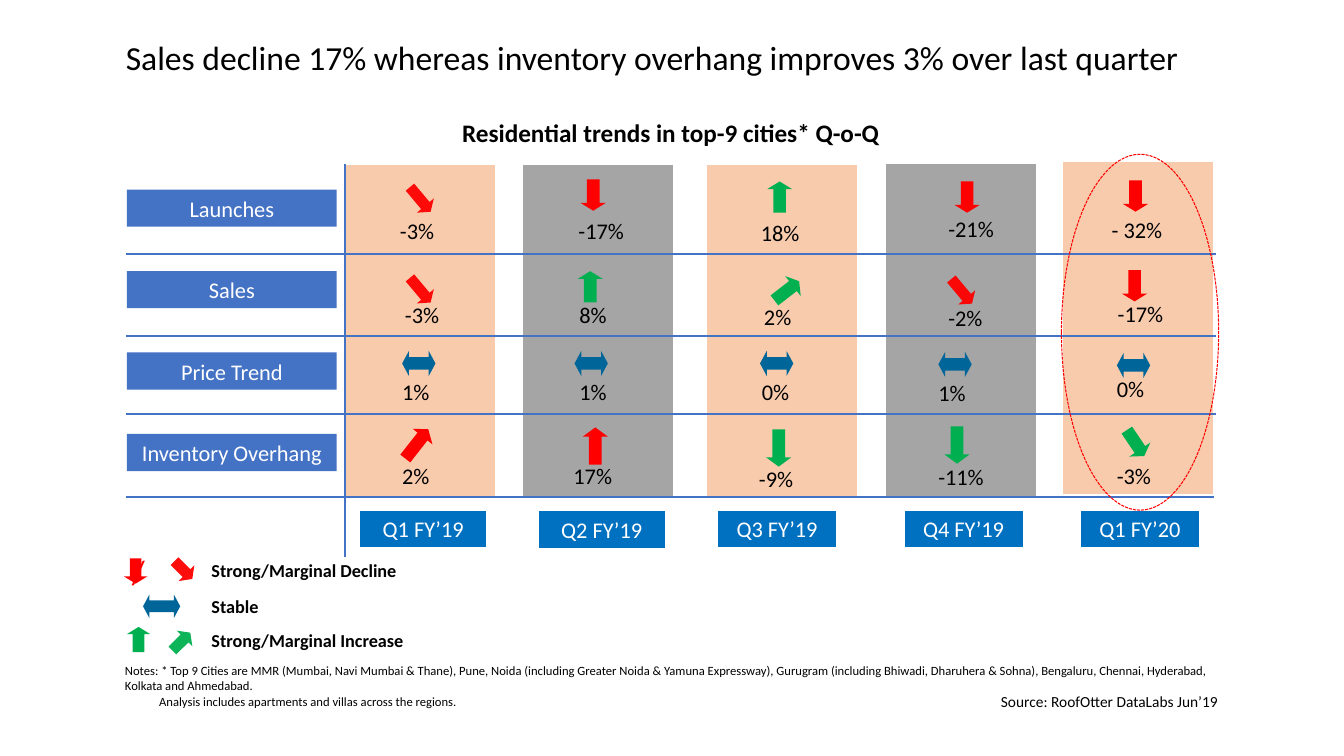
"""Builds the quarterly residential trends slide and saves it as out.pptx."""
from lxml import etree
from pptx import Presentation
from pptx import util as u
from pptx.dml import color as col
from pptx.enum import dml, shapes, text
from pptx.oxml import ns

BLACK, WHITE, RED, GREEN = "000000", "FFFFFF", "FF0000", "00B050"
BLUE, TAG_BLUE, TEAL = "4472C4", "0070C0", "006699"
PEACH, GREY = "F8CBAD", "A5A5A5"
SHAPE = shapes.MSO_SHAPE
LEFT, CENTER = text.PP_ALIGN.LEFT, text.PP_ALIGN.CENTER
TOP, MIDDLE = text.MSO_ANCHOR.TOP, text.MSO_ANCHOR.MIDDLE

ARROWS = {
    "fall": (SHAPE.UP_ARROW, 18, 22.3, 0.31, 180, RED, 100),
    "sink": (SHAPE.UP_ARROW, 15.8, 23, 0.37, 140, RED, 95),
    "rise": (SHAPE.UP_ARROW, 18, 22.3, 0.31, 0, GREEN, 100),
    "climb": (SHAPE.UP_ARROW, 18, 22.3, 0.31, 52.2, GREEN, 100),
    "ease": (SHAPE.UP_ARROW, 18, 22.3, 0.31, 146.2, GREEN, 100),
    "drop": (SHAPE.UP_ARROW, 18, 26.6, 0.37, 180, GREEN, 100),
    "surge": (SHAPE.UP_ARROW, 18, 26.6, 0.37, 0, RED, 100),
    "swell": (SHAPE.UP_ARROW, 18, 26.6, 0.37, 38.1, RED, 100),
    "flat": (SHAPE.LEFT_RIGHT_ARROW, 23.8, 18, 0.27, 0, TEAL, 100),
    "key fall": (SHAPE.UP_ARROW, 16.6, 18, 0.31, 180, RED, 100),
    "key sink": (SHAPE.UP_ARROW, 15.8, 18, 0.37, 135, RED, 95),
    "key flat": (SHAPE.LEFT_RIGHT_ARROW, 26.6, 16.6, 0.27, 0, TEAL, 100),
    "key rise": (SHAPE.UP_ARROW, 16.6, 18, 0.31, 0, GREEN, 100),
    "key climb": (SHAPE.UP_ARROW, 15.8, 18, 0.37, 45, GREEN, 95),
}

QUARTERS = [
    (246.2, 117.4, PEACH, "Q1 FY’19", 257, 364.3, 90.7),
    (373, 117.4, GREY, "Q2 FY’19", 384.5, 365, 90.7),
    (504.7, 117.4, PEACH, "Q3 FY’19", 512.6, 364.3, 85),
    (632.2, 116.6, GREY, "Q4 FY’19", 645.8, 364.3, 85),
    (758.9, 115.2, PEACH, "Q1 FY’20", 771.8, 364.3, 85),
]

CELLS = [
    ("-3%", 278.6, 151.2, "sink", 292.3, 131),
    ("-3%", 282.2, 211.7, "sink", 292.3, 195.8),
    ("1%", 280.1, 266.4, "flat", 287.3, 250.6),
    ("2%", 280.1, 326.2, "swell", 288.7, 303.8),
    ("-17%", 406.1, 151.2, "fall", 414.7, 128.2),
    ("8%", 406.8, 211.7, "rise", 412.6, 193.7),
    ("1%", 406.8, 266.4, "flat", 410.4, 250.6),
    ("17%", 402.5, 326.2, "surge", 416.2, 305.3),
    ("18%", 536.4, 152.6, "rise", 547.9, 129.6),
    ("2%", 538.6, 213.1, "climb", 553, 196.6),
    ("0%", 537.1, 266.4, "flat", 542.9, 250.6),
    ("-9%", 535, 328.3, "drop", 547.2, 306.7),
    ("-21%", 670.3, 149.8, "fall", 681.8, 129.6),
    ("-2%", 670.3, 213.8, "sink", 679, 196.6),
    ("1%", 663.1, 267.1, "flat", 670.3, 251.3),
    ("-11%", 663.1, 326.9, "drop", 674.6, 304.6),
    ("- 32%", 787, 150.5, "fall", 802.1, 128.9),
    ("-17%", 791.3, 211, "fall", 801.4, 193),
    ("0%", 790.6, 264.2, "flat", 797.8, 252),
    ("-3%", 790.6, 326.2, "ease", 802.1, 305.3),
]

LEGEND = [
    ("Strong/Marginal Decline", 396.7, [("key fall", 88.6, 398.9), ("key sink", 123.1, 398.2)]),
    ("Stable", 422.6, [("key flat", 102.2, 424.8)]),
    ("Strong/Marginal Increase", 446.8, [("key rise", 90.7, 447.8), ("key climb", 121.7, 449.3)]),
]

NOTES = (
    "Notes: * Top 9 Cities are MMR (Mumbai, Navi Mumbai & Thane), Pune, Noida "
    "(including Greater Noida & Yamuna Expressway), Gurugram (including Bhiwadi, "
    "Dharuhera & Sohna), Bengaluru, Chennai, Hyderabad, Kolkata and Ahmedabad.\n"
    "Analysis includes apartments and villas across the regions."
)


def rgb(code):
    return col.RGBColor.from_string(code)


class Board:
    font = "Calibri"

    def __init__(self, s):
        self.s = s

    def style(self, sp, words, size, color, bold=False, align=LEFT, anchor=MIDDLE):
        tf = sp.text_frame
        tf.text = words
        tf.word_wrap = True
        tf.vertical_anchor = anchor
        for p in tf.paragraphs:
            p.alignment = align
            for r in p.runs:
                r.font.name, r.font.size, r.font.bold = self.font, u.Pt(size), bold
                r.font.color.rgb = rgb(color)
        return tf

    def label(self, words, x, y, w, h, size=16, color=BLACK, inset=7.2, **look):
        sp = self.s.shapes.add_textbox(u.Pt(x), u.Pt(y), u.Pt(w), u.Pt(h))
        tf = self.style(sp, words, size, color, **look)
        tf.margin_left = tf.margin_right = u.Pt(inset)
        return tf

    def shape(self, kind, x, y, w, h, fill=None, line=None):
        sp = self.s.shapes.add_shape(kind, u.Pt(x), u.Pt(y), u.Pt(w), u.Pt(h))
        sp.shadow.inherit = False
        if fill:
            sp.fill.solid()
            sp.fill.fore_color.rgb = rgb(fill)
        else:
            sp.fill.background()
        if line:
            sp.line.color.rgb = rgb(line)
            sp.line.width = u.Pt(0.75)
        else:
            sp.line.fill.background()
        return sp

    def tag(self, words, x, y, w, fill, line=None):
        sp = self.shape(SHAPE.RECTANGLE, x, y, w, 26.6, fill, line)
        self.style(sp, words, 16, WHITE, align=CENTER)

    def arrow(self, kind, x, y):
        preset, w, h, head, angle, color, opacity = ARROWS[kind]
        sp = self.shape(preset, x, y, w, h, color)
        sp.adjustments[0], sp.adjustments[1] = 0.5, head
        sp.rotation = angle
        if opacity < 100:
            clr = sp._element.spPr.find(".//" + ns.qn("a:srgbClr"))
            etree.SubElement(clr, ns.qn("a:alpha"), val=str(opacity * 1000))

    def rule(self, x1, y1, x2, y2):
        c = self.s.shapes.add_connector(
            shapes.MSO_CONNECTOR.STRAIGHT, u.Pt(x1), u.Pt(y1), u.Pt(x2), u.Pt(y2))
        c.line.color.rgb = rgb(BLUE)
        c.line.width = u.Pt(1.5)
        etree.SubElement(c._element.spPr, ns.qn("a:effectLst"))


def main():
    prs = Presentation()
    prs.slide_width, prs.slide_height = u.Pt(960), u.Pt(540)
    b = Board(prs.slides.add_slide(prs.slide_layouts[6]))

    title = b.label("Sales decline 17% whereas inventory overhang improves 3% over last quarter",
                    82.8, 22.3, 797, 41, size=24)
    title.paragraphs[0].line_spacing = 0.9
    b.label("Residential trends in top-9 cities* Q-o-Q", 290.9, 79.2, 376.6, 30.2,
            size=18, inset=0, bold=True, align=CENTER)

    for x, y, fill, name, tag_x, tag_y, tag_w in QUARTERS:
        b.shape(SHAPE.RECTANGLE, x, y, 108, 238.3, fill, WHITE)
        b.tag(name, tag_x, tag_y, tag_w, TAG_BLUE, WHITE)
    for i, name in enumerate(["Launches", "Sales", "Price Trend", "Inventory Overhang"]):
        b.tag(name, 90.7, 135.4 + 58.2 * i, 149.8, BLUE)
    b.rule(246.2, 117.4, 246.2, 398.2)
    for y, right in [(181.4, 868.3), (239.8, 868.3), (295.9, 868.3), (355, 866.9)]:
        b.rule(90, y, right, y)

    for value, x, y, kind, arrow_x, arrow_y in CELLS:
        b.label(value, x, y, 54, 26.6)
        b.arrow(kind, arrow_x, arrow_y)
    ring = b.shape(SHAPE.OVAL, 758.2, 110.2, 112.3, 254.2, line=RED)
    ring.line.dash_style = dml.MSO_LINE.SQUARE_DOT

    for name, y, arrows in LEGEND:
        b.label(name, 144, y, 160, 21, size=13, bold=True)
        for arrow in arrows:
            b.arrow(*arrow)
    b.label("/", 92.9, 398.9, 38.9, 18, size=24, color=RED, inset=1.4)

    notes = b.label(NOTES, 89.3, 470.2, 780.5, 40.3, size=9, inset=0, anchor=TOP)
    notes.margin_right = u.Pt(7.2)
    notes.paragraphs[1]._p.get_or_add_pPr().set("marL", str(u.Pt(24.4)))
    b.label("Source: RoofOtter DataLabs Jun’19", 707.8, 491, 247, 20.9, size=11, anchor=TOP)
    prs.save("out.pptx")


if __name__ == "__main__":
    main()
